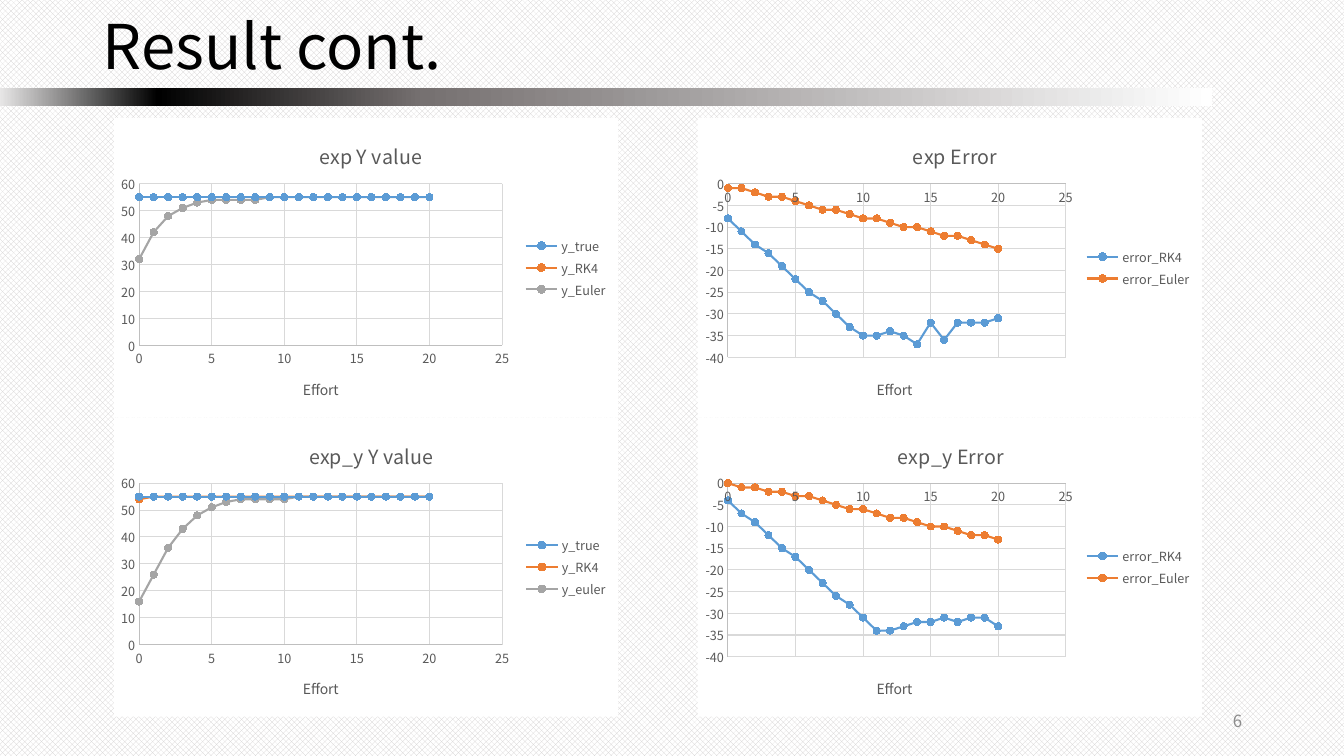
from pptx import Presentation
from pptx import util as u
from pptx.chart.data import XyChartData
from pptx.dml.color import RGBColor
from pptx.enum import chart as charts, dml, shapes, text
from pptx.oxml import parse_xml
from pptx.oxml.ns import nsdecls, qn

FONT = "Noto Sans CJK KR"
BLUE, ORANGE, GRAY = "5B9BD5", "ED7D31", "A5A5A5"
SERIES_COLORS = [BLUE, ORANGE, GRAY]
Y_AXIS = {"minimum_scale": 0, "maximum_scale": 60, "major_unit": 10}
ERROR_AXIS = {"minimum_scale": -40, "maximum_scale": 0, "major_unit": 5}
EFFORT_AXIS = {"minimum_scale": 0, "maximum_scale": 25, "major_unit": 5}
Y_COLUMN = {"left": 1.13, "axis": Y_AXIS, "plot": (0.05, 0.22, 0.72, 0.54), "effort": 0.37}
ERROR_COLUMN = {"left": 6.92, "axis": ERROR_AXIS, "plot": (0.06, 0.22, 0.67, 0.58), "effort": 0.35}

CHARTS = [
    ("exp Y value", 0.4, Y_COLUMN, 1.17, {
        "y_true": [55] * 21,
        "y_RK4": [55] * 21,
        "y_Euler": [32, 42, 48, 51, 53] + [54] * 4 + [55] * 12,
    }),
    ("exp Error", 0.42, ERROR_COLUMN, 1.17, {
        "error_RK4": [-8, -11, -14, -16, -19, -22, -25, -27, -30, -33, -35,
                      -35, -34, -35, -37, -32, -36, -32, -32, -32, -31],
        "error_Euler": [-1, -1, -2, -3, -3, -4, -5, -6, -6, -7, -8,
                        -8, -9, -10, -10, -11, -12, -12, -13, -14, -15],
    }),
    ("exp_y Y value", 0.38, Y_COLUMN, 4.14, {
        "y_true": [55] * 21,
        "y_RK4": [54] + [55] * 20,
        "y_euler": [16, 26, 36, 43, 48, 51, 53] + [54] * 4 + [55] * 10,
    }),
    ("exp_y Error", 0.39, ERROR_COLUMN, 4.14, {
        "error_RK4": [-4, -7, -9, -12, -15, -17, -20, -23, -26, -28, -31,
                      -34, -34, -33, -32, -32, -31, -32, -31, -31, -33],
        "error_Euler": [0, -1, -1, -2, -2, -3, -3, -4, -5, -6, -6,
                        -7, -8, -8, -9, -10, -10, -11, -12, -12, -13],
    }),
]


def color(value):
    return RGBColor.from_string(value)


def apply(target, values):
    for name, value in values.items():
        setattr(target, name, value)


class SlideBuilder:
    def __init__(self, slide, font):
        self.slide = slide
        self.font = font

    def style(self, font, size, shade):
        apply(font, {"name": self.font, "size": u.Pt(size), "bold": False})
        font.color.rgb = color(shade)

    def line(self, line, shade, width):
        line.color.rgb = color(shade)
        line.width = u.Pt(width)

    def background(self, front, back):
        fill = self.slide.background.fill
        fill.patterned()
        fill.pattern = dml.MSO_PATTERN.OUTLINED_DIAMOND
        fill.fore_color.rgb = color(front)
        fill.back_color.rgb = color(back)

    def gradient_bar(self, box, stops):
        shape = self.slide.shapes.add_shape(shapes.MSO_SHAPE.RECTANGLE, *map(u.Inches, box))
        shape.shadow.inherit = False
        shape.line.fill.background()
        shape.fill.gradient()
        shape.fill.gradient_angle = 0
        stop_list = shape._element.spPr.find(".//" + qn("a:gsLst"))
        for stop in list(stop_list):
            stop_list.remove(stop)
        for position, shade in stops:
            stop_list.append(parse_xml(
                f'<a:gs {nsdecls("a")} pos="{position * 1000}"><a:srgbClr val="{shade}"/></a:gs>'))

    def fill_text(self, shape, box, words, size, shade, frame, paragraph_format):
        apply(shape, dict(zip(("left", "top", "width", "height"), map(u.Inches, box))))
        apply(shape.text_frame, {"word_wrap": True, "auto_size": text.MSO_AUTO_SIZE.NONE, **frame})
        paragraph = shape.text_frame.paragraphs[0]
        paragraph.text = words
        apply(paragraph, paragraph_format)
        self.style(paragraph.runs[0].font, size, shade)

    def title(self, box, words):
        self.fill_text(self.slide.shapes.title, box, words, 44, "000000",
                       {"vertical_anchor": text.MSO_ANCHOR.BOTTOM},
                       {"alignment": text.PP_ALIGN.LEFT, "line_spacing": 0.9})

    def page_number(self, box, words):
        shape = self.slide.shapes.add_textbox(*map(u.Inches, box))
        self.fill_text(shape, box, words, 12, "8C8C8C",
                       {"vertical_anchor": text.MSO_ANCHOR.MIDDLE},
                       {"alignment": text.PP_ALIGN.RIGHT})

    def place(self, element, index, values, inner=False):
        for layout in element.findall(qn("c:layout")):
            element.remove(layout)
        target = '<c:layoutTarget val="inner"/>' if inner else ""
        modes = '<c:xMode val="edge"/><c:yMode val="edge"/>'
        sizes = "".join(f'<c:{name} val="{value}"/>' for name, value in zip("xywh", values))
        element.insert(index, parse_xml(
            f'<c:layout {nsdecls("c")}><c:manualLayout>{target}{modes}{sizes}'
            '</c:manualLayout></c:layout>'))

    def chart_label(self, label, words, size, position):
        paragraph = label.text_frame.paragraphs[0]
        paragraph.text = words
        self.style(paragraph.runs[0].font, size, "595959")
        self.place(label._element, 1, position)

    def axis(self, axis, scale):
        apply(axis, {"has_major_gridlines": True, "major_tick_mark": charts.XL_TICK_MARK.NONE,
                     "minor_tick_mark": charts.XL_TICK_MARK.NONE, **scale})
        apply(axis.tick_labels, {"number_format": "General", "number_format_is_linked": False})
        self.style(axis.tick_labels.font, 9, "595959")
        self.line(axis.format.line, "BFBFBF", 0.75)
        self.line(axis.major_gridlines.format.line, "D9D9D9", 0.75)

    def scatter(self, title, title_left, column, top, series_values):
        data = XyChartData()
        for name, values in series_values.items():
            series = data.add_series(name)
            for effort, value in enumerate(values):
                series.add_data_point(effort, value)
        box = (column["left"], top, 5, 2.97)
        chart = self.slide.shapes.add_chart(
            charts.XL_CHART_TYPE.XY_SCATTER_LINES, *map(u.Inches, box), data).chart
        self.style(chart.font, 10, "000000")
        chart._chartSpace.find(qn("c:txPr")).addprevious(parse_xml(
            f'<c:spPr {nsdecls("c", "a")}><a:solidFill><a:srgbClr val="FFFFFF"/></a:solidFill>'
            '<a:ln><a:noFill/></a:ln></c:spPr>'))
        apply(chart, {"has_title": True, "has_legend": True})
        self.chart_label(chart.chart_title, title, 14, (title_left, 0.06))
        apply(chart.legend, {"position": charts.XL_LEGEND_POSITION.RIGHT, "include_in_layout": False})
        self.style(chart.legend.font, 9, "595959")
        self.axis(chart.category_axis, EFFORT_AXIS)
        self.axis(chart.value_axis, column["axis"])
        self.chart_label(chart.category_axis.axis_title, "Effort", 10, (column["effort"], 0.86))
        self.place(chart._chartSpace.chart.plotArea, 0, column["plot"], inner=True)
        plot = chart.plots[0]
        plot.vary_by_categories = False
        for series, shade in zip(plot.series, SERIES_COLORS):
            self.line(series.format.line, shade, 1.5)
            apply(series.marker, {"style": charts.XL_MARKER_STYLE.CIRCLE, "size": 5})
            series.marker.format.fill.solid()
            series.marker.format.fill.fore_color.rgb = color(shade)
            self.line(series.marker.format.line, shade, 0.75)


def main():
    presentation = Presentation()
    apply(presentation, {"slide_width": u.Inches(13.33), "slide_height": u.Inches(7.5)})
    builder = SlideBuilder(presentation.slides.add_slide(presentation.slide_layouts[5]), FONT)
    builder.background("D0CECE", "FFFFFF")
    builder.gradient_bar((0, 0.87, 12.02, 0.18),
                         [(0, "E7E6E6"), (13, "000000"), (35, "767171"), (100, "FFFFFF")])
    builder.page_number((9.42, 6.95, 3, 0.4), "6")
    builder.title((0.92, 0, 11.5, 0.87), "Result cont.")
    for chart in CHARTS:
        builder.scatter(*chart)
    presentation.save("out.pptx")


if __name__ == "__main__":
    main()
